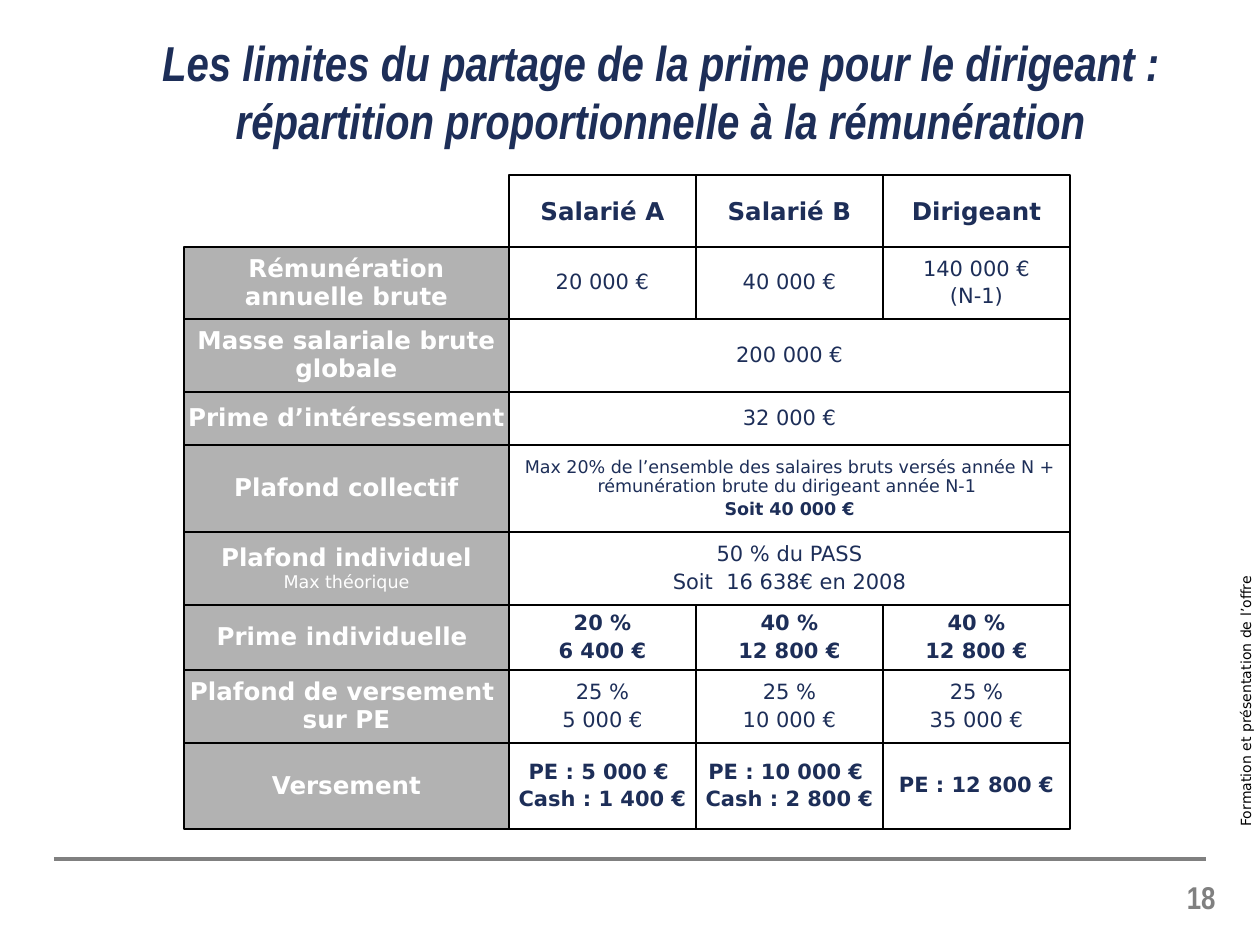
from lxml.etree import SubElement
from pptx import Presentation
from pptx.dml.color import RGBColor
from pptx.enum.shapes import MSO_CONNECTOR as LINE, MSO_SHAPE as SHAPE
from pptx.enum.text import MSO_ANCHOR as ANCHOR, PP_ALIGN as ALIGN
from pptx.oxml.ns import qn
from pptx.util import Emu, Pt

COLORS = {"navy": "1D2E58", "gray": "808080", "label": "B2B2B2",
          "white": "FFFFFF", "black": "000000"}
NARROW, SANS = "Arial Narrow", "DejaVu Sans"


def px(value):
    return Emu(round(value * 914400 / 126))


def rgb(name):
    return RGBColor.from_string(COLORS[name])


class Deck:
    def __init__(self, width, height):
        self.prs = Presentation()
        self.prs.slide_width, self.prs.slide_height = px(width), px(height)
        self.slide = self.prs.slides.add_slide(self.prs.slide_layouts[6])

    def add_lines(self, frame, lines, color, font=SANS, align=ALIGN.CENTER,
                  italic=False, spacing=None, gap=0):
        for index, (text, size, bold) in enumerate(lines):
            paragraph = frame.add_paragraph() if index else frame.paragraphs[0]
            paragraph.alignment = align
            paragraph.line_spacing = spacing
            if index and gap:
                paragraph.space_before = Pt(round(size * gap, 1))
            run = paragraph.add_run()
            run.text = text
            run.font.name, run.font.size = font, Pt(size)
            run.font.bold, run.font.italic = bold, italic
            run.font.color.rgb = rgb(color)

    def text(self, box, line, color, font, align, anchor=ANCHOR.TOP,
             italic=False, rotation=0):
        area = self.slide.shapes.add_textbox(*map(px, box))
        area.rotation = rotation
        area.text_frame.word_wrap = True
        area.text_frame.vertical_anchor = anchor
        self.add_lines(area.text_frame, [line], color, font, align, italic)

    def cell(self, box, lines, color, fill, border, insets, spacing=None, gap=0):
        rect = self.slide.shapes.add_shape(SHAPE.RECTANGLE, *map(px, box))
        rect.shadow.inherit = False
        if fill:
            rect.fill.solid()
            rect.fill.fore_color.rgb = rgb(fill)
        else:
            rect.fill.background()
        rect.line.color.rgb = rgb("black")
        rect.line.width = Pt(border)
        frame = rect.text_frame
        frame.word_wrap = True
        frame.vertical_anchor = ANCHOR.MIDDLE
        frame.margin_left = frame.margin_right = px(insets[0])
        frame.margin_top = frame.margin_bottom = px(insets[1])
        self.add_lines(frame, lines, color, spacing=spacing, gap=gap)

    def header(self, box, name):
        self.cell(box, [(name, 14, True)], "navy", None, 0.75, (2, 6))

    def label(self, box, lines):
        self.cell(box, lines, "white", "label", 0.75, (2, 6), 0.95)

    def value(self, box, lines):
        self.cell(box, lines, "navy", "white", 1, (5, 5), 0.9, 0.23)

    def rule(self, x1, y1, x2, y2, color, width):
        line = self.slide.shapes.add_connector(LINE.STRAIGHT, *map(px, (x1, y1, x2, y2)))
        line.line.color.rgb = rgb(color)
        line.line.width = Pt(width)
        SubElement(line._element.spPr, qn("a:effectLst"))


def title_lines(*texts):
    return [(text, 14, True) for text in texts]


def plain(*texts):
    return [(text, 12, False) for text in texts]


def strong(*texts):
    return [(text, 12, True) for text in texts]


EMPLOYEES = ["Salarié A", "Salarié B", "Dirigeant"]
ROWS = [
    (72, title_lines("Rémunération annuelle brute"),
     [plain("20 000 €"), plain("40 000 €"), plain("140 000 €", "(N-1)")]),
    (73, title_lines("Masse salariale brute globale"), [plain("200 000 €")]),
    (53, title_lines("Prime d’intéressement"), [plain("32 000 €")]),
    (87, title_lines("Plafond collectif"),
     [[("Max 20% de l’ensemble des salaires bruts versés année N + "
        "rémunération brute du dirigeant année N-1 ", 10, False),
       ("Soit 40 000 €", 10, True)]]),
    (73, title_lines("Plafond individuel") + [("Max théorique", 10, False)],
     [plain("50 % du PASS", "Soit  16 638€ en 2008")]),
    (65, title_lines("Prime individuelle "),
     [strong("20 %", "6 400 €"), strong("40 %", "12 800 €"), strong("40 %", "12 800 €")]),
    (73, title_lines("Plafond de versement ", "sur PE"),
     [plain("25 %", "5 000 €"), plain("25 %", "10 000 €"), plain("25 %", "35 000 €")]),
    (86, title_lines("Versement"),
     [strong("PE : 5 000 € ", "Cash : 1 400 €"),
      strong("PE : 10 000 € ", "Cash : 2 800 €"), strong("PE : 12 800 €")]),
]
LABEL_X, VALUE_X, COLUMN, TOP, HEADER = 184, 509, 187, 175, 72


def main():
    deck = Deck(1260, 945)
    deck.rule(54, 859, 1206, 859, "gray", 1.75)
    deck.text((1052, 631, 387, 29), ("Formation et présentation de l’offre", 8, False),
              "black", SANS, ALIGN.LEFT, rotation=270)
    deck.text((1155, 872, 73, 63), ("18", 18, True), "gray", NARROW, ALIGN.RIGHT)
    deck.text((95, 23, 1131, 136),
              ("Les limites du partage de la prime pour le dirigeant : "
               "répartition proportionnelle à la rémunération", 28, True),
              "navy", NARROW, ALIGN.CENTER, ANCHOR.MIDDLE, italic=True)

    for column, name in enumerate(EMPLOYEES):
        deck.header((VALUE_X + column * COLUMN, TOP, COLUMN, HEADER), name)

    y = TOP + HEADER
    for height, label, values in ROWS:
        deck.label((LABEL_X, y, VALUE_X - LABEL_X, height), label)
        width = COLUMN * len(EMPLOYEES) // len(values)
        for column, lines in enumerate(values):
            deck.value((VALUE_X + column * width, y, width, height), lines)
        y += height

    deck.prs.save("out.pptx")


if __name__ == "__main__":
    main()
